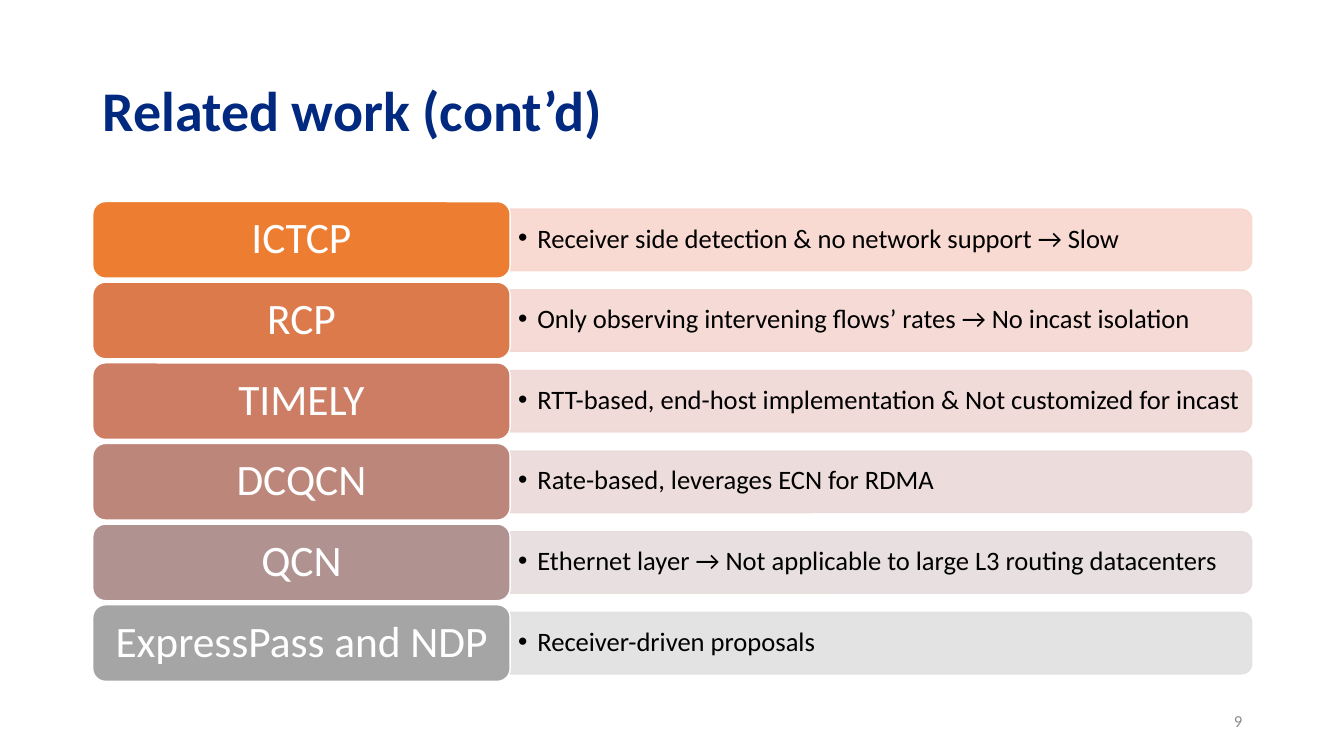
"""Build the related work slide with six named approaches and a remark on each."""
from lxml.etree import SubElement
from pptx import Presentation
from pptx.dml.color import RGBColor
from pptx.enum.shapes import MSO_SHAPE as Shape
from pptx.enum.text import MSO_ANCHOR as Anchor, PP_ALIGN as Align
from pptx.oxml.ns import qn
from pptx.util import Inches, Pt


def paint(shape, fill, line):
    shape.shadow.inherit = False
    shape.fill.solid()
    shape.fill.fore_color.rgb = RGBColor.from_string(fill)
    shape.line.color.rgb = RGBColor.from_string(line)
    shape.line.width = Pt(1)


def write(shape, text, size, color, align=Align.LEFT, pad=(0.1, 0.05), gap=0.9, bold=False):
    frame = shape.text_frame
    frame.text = text
    frame.word_wrap = True
    frame.vertical_anchor = Anchor.MIDDLE
    frame.margin_left = frame.margin_right = Inches(pad[0])
    frame.margin_top = frame.margin_bottom = Inches(pad[1])
    para = frame.paragraphs[0]
    para.alignment = align
    para.line_spacing = gap
    font = para.runs[0].font
    font.name = "Calibri"
    font.size = Pt(size)
    font.bold = bold
    font.color.rgb = RGBColor.from_string(color)
    return para


deck = Presentation()
deck.slide_width, deck.slide_height = Inches(13.33), Inches(7.5)
slide = deck.slides.add_slide(deck.slide_layouts[6])
shapes = slide.shapes

title = shapes.add_textbox(Inches(0.92), Inches(0.4), Inches(10.32), Inches(1.45))
write(title, "Related work (cont’d)", 40, "00297F", bold=True)

rows = [
    ("ICTCP", "Receiver side detection & no network support → Slow", "ED7D31", "F8D7CE"),
    ("RCP", "Only observing intervening flows’ rates → No incast isolation", "DC7A4B", "F4D7D1"),
    ("TIMELY", "RTT-based, end-host implementation & Not customized for incast", "CC7D64", "EFD8D5"),
    ("DCQCN", "Rate-based, leverages ECN for RDMA", "BD867B", "EADAD9"),
    ("QCN", "Ethernet layer → Not applicable to large L3 routing datacenters", "B09391", "E6DDDD"),
    ("ExpressPass and NDP", "Receiver-driven proposals", "A5A5A5", "E1E1E1"),
]
for i, (name, remark, dark, pale) in enumerate(rows):
    top = 2 + 0.8 * i

    bar = shapes.add_shape(Shape.ROUND_2_SAME_RECTANGLE, Inches(8.43), Inches(top - 3.3),
                           Inches(0.61), Inches(7.36))
    bar.rotation = 90
    paint(bar, pale, pale)
    for color in bar.element.spPr.iter(qn("a:srgbClr")):
        SubElement(color, qn("a:alpha"), val="90000")

    note = shapes.add_textbox(Inches(5.06), Inches(top + 0.1), Inches(7.33), Inches(0.55))
    para = write(note, remark, 19, "000000", pad=(0.08, 0.04))
    props = para._p.get_or_add_pPr()
    props.set("marL", str(Inches(0.19)))
    props.set("indent", str(Inches(-0.19)))
    SubElement(props, qn("a:buFont"), typeface="Arial")
    SubElement(props, qn("a:buChar"), char="•")

    label = shapes.add_shape(Shape.ROUNDED_RECTANGLE, Inches(0.92), Inches(top),
                             Inches(4.14), Inches(0.76))
    paint(label, dark, "FFFFFF")
    write(label, name, 31, "FFFFFF", Align.CENTER, pad=(0.12, 0.06))

number = shapes.add_textbox(Inches(9.42), Inches(6.95), Inches(3), Inches(0.4))
write(number, "9", 12, "8C8C8C", Align.RIGHT, gap=1.0)

deck.save("out.pptx")
